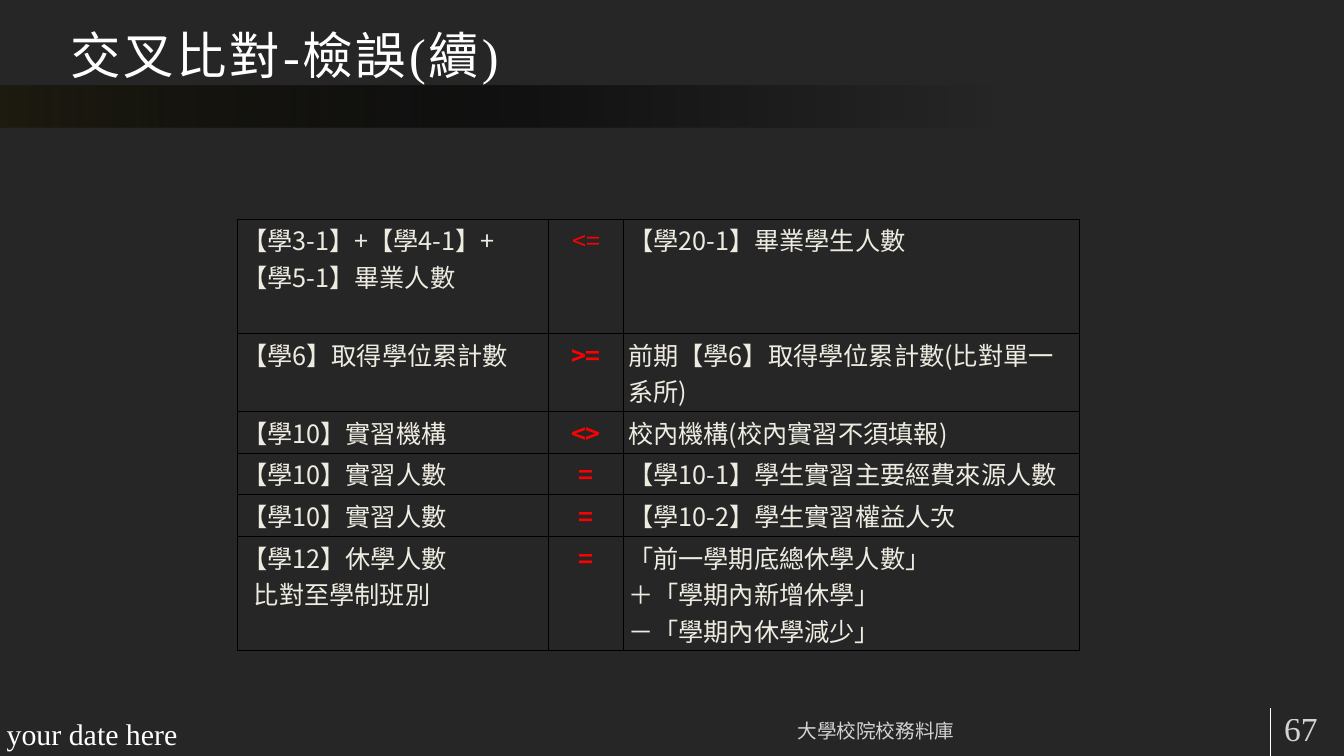
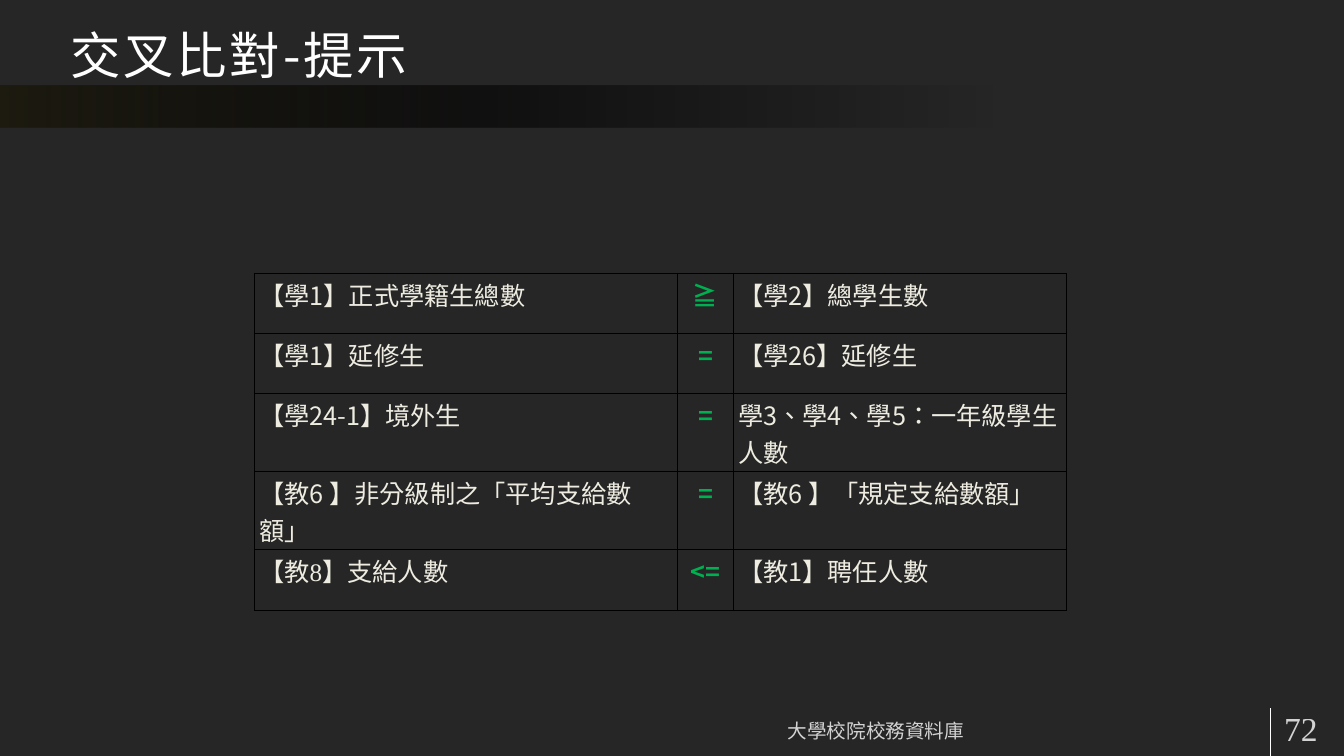
from dataclasses import dataclass

from lxml.etree import SubElement
from pptx import Presentation
from pptx.dml.color import RGBColor
from pptx.enum.shapes import MSO_CONNECTOR, MSO_SHAPE
from pptx.enum.text import MSO_ANCHOR, PP_ALIGN
from pptx.oxml.ns import qn
from pptx.util import Cm, Pt


@dataclass(frozen=True)
class Theme:
    background: str = "262626"
    white: str = "FFFFFF"
    cream: str = "EEECE1"
    red: str = "FF0000"
    green: str = "00B050"
    border: str = "000000"
    # position %, colour, opacity %
    band: tuple = ((0, "1E1C11", 100), (39, "000000", 54), (74, "000000", 0))
    serif: str = "Times New Roman"
    sans: str = "Noto Sans CJK SC"
    language: str = "zh-TW"
    title_size: int = 54
    number_size: int = 36
    date_size: int = 32
    table_size: int = 27
    footer_size: int = 21


theme = Theme()


def format_text(tf, size, color, font, align=PP_ALIGN.LEFT, bold=False, opacity=100, spacing=0):
    """Format every run; opacity is in percent, letter spacing in points."""
    for p in tf.paragraphs:
        p.alignment = align
        for r in p.runs:
            r.font.size = Pt(size)
            r.font.bold = bold
            r.font.name = font
            r.font.color.rgb = RGBColor.from_string(color)
            rPr = r.font._element
            rPr.set("lang", theme.language)
            SubElement(rPr, qn("a:ea"), typeface=theme.sans)
            if opacity < 100:
                SubElement(rPr.find(".//" + qn("a:srgbClr")), qn("a:alpha"), val=str(opacity * 1000))
            if spacing:
                rPr.set("spc", str(spacing * 100))


def add_text(slide, text, box, anchor, insets=(0.46, 0.23)):
    tf = slide.shapes.add_textbox(*map(Cm, box)).text_frame
    tf.word_wrap = True
    tf.vertical_anchor = anchor
    tf.margin_left = tf.margin_right = Cm(insets[0])
    tf.margin_top = tf.margin_bottom = Cm(insets[1])
    tf.text = text
    return tf


slides = [
    {
        "title": "交叉比對-檢誤(續)",
        "title_font": theme.serif,
        "footer": "大學校院校務料庫",
        "number": "67",
        "date": "your date here",
        "operator_color": theme.red,
        "table_at": (8.97, 8.28),
        "columns": (11.77, 2.82, 17.25),
        "heights": (4.33, 2.95, 1.57, 1.57, 1.57, 4.33),
        "rows": [
            ("【學3-1】+【學4-1】+【學5-1】畢業人數", "<=", "【學20-1】畢業學生人數"),
            ("【學6】取得學位累計數", ">=", "前期【學6】取得學位累計數(比對單一系所)"),
            ("【學10】實習機構", "<>", "校內機構(校內實習不須填報)"),
            ("【學10】實習人數", "=", "【學10-1】學生實習主要經費來源人數"),
            ("【學10】實習人數", "=", "【學10-2】學生實習權益人次"),
            ("【學12】休學人數\n比對至學制班別", "=",
             "「前一學期底總休學人數」\n＋「學期內新增休學」\n－「學期內休學減少」"),
        ],
        "plain_operator_rows": {0},
        "serif_rows": set(),
        "indented_rows": {5},
    },
    {
        "title": "交叉比對-提示",
        "title_font": theme.sans,
        "footer": "大學校院校務資料庫",
        "number": "72",
        "date": None,
        "operator_color": theme.green,
        "table_at": (9.62, 10.33),
        "columns": (15.99, 2.11, 12.57),
        "heights": (2.28, 2.28, 2.95, 2.95, 2.28),
        "rows": [
            ("【學1】正式學籍生總數", "≧", "【學2】總學生數"),
            ("【學1】延修生", "=", "【學26】延修生"),
            ("【學24-1】境外生", "=", "學3、學4、學5：一年級學生人數"),
            ("【教6 】非分級制之「平均支給數額」", "=", "【教6 】「規定支給數額」"),
            ("【教8】支給人數", "<=", "【教1】聘任人數"),
        ],
        "plain_operator_rows": set(),
        "serif_rows": {4},
        "indented_rows": set(),
    },
]

prs = Presentation()
prs.slide_width, prs.slide_height = Cm(50.8), Cm(28.58)
fill = prs.slide_master.background.fill
fill.solid()
fill.fore_color.rgb = RGBColor.from_string(theme.background)

for content in slides:
    slide = prs.slides.add_slide(prs.slide_layouts[6])

    # Fading band under the title
    band = slide.shapes.add_shape(MSO_SHAPE.RECTANGLE, 0, Cm(3.23), prs.slide_width, Cm(1.6))
    band.shadow.inherit = False
    band.line.fill.background()
    band.fill.gradient()
    band.fill.gradient_angle = 0
    stops = band._element.spPr.find(".//" + qn("a:gsLst"))
    for stop in list(stops):
        stops.remove(stop)
    for position, color, opacity in theme.band:
        stop = SubElement(stops, qn("a:gs"), pos=str(position * 1000))
        rgb = SubElement(stop, qn("a:srgbClr"), val=color)
        SubElement(rgb, qn("a:alpha"), val=str(opacity * 1000))

    # Rule beside the slide number
    rule = slide.shapes.add_connector(
        MSO_CONNECTOR.STRAIGHT, Cm(48.01), Cm(26.77), Cm(48.01), prs.slide_height)
    rule.line.color.rgb = RGBColor.from_string(theme.white)
    rule.line.width = Pt(0.75)
    SubElement(rule._element.spPr, qn("a:effectLst"))

    tf = add_text(slide, content["title"], (2.2, 0, 45.72, 3.43), MSO_ANCHOR.BOTTOM)
    format_text(tf, theme.title_size, theme.white, content["title_font"], spacing=3)
    tf = add_text(slide, content["footer"], (18.21, 26.77, 29.79, 1.52), MSO_ANCHOR.BOTTOM)
    format_text(tf, theme.footer_size, theme.white, theme.serif, PP_ALIGN.CENTER, opacity=80)
    tf = add_text(slide, content["number"], (48.08, 26.77, 2.92, 1.52), MSO_ANCHOR.MIDDLE)
    format_text(tf, theme.number_size, theme.white, theme.serif, opacity=80)
    if content["date"]:
        tf = add_text(slide, content["date"], (0, 26.92, 11.43, 1.17), MSO_ANCHOR.TOP, (0.25, 0.13))
        format_text(tf, theme.date_size, theme.white, theme.serif)

    # Comparison table: left item, operator, right item
    rows, columns, heights = content["rows"], content["columns"], content["heights"]
    left, top = content["table_at"]
    table = slide.shapes.add_table(
        len(rows), len(columns), Cm(left), Cm(top), Cm(sum(columns)), Cm(sum(heights))).table
    table.first_row = table.horz_banding = False
    for column, width in zip(table.columns, columns):
        column.width = Cm(width)
    for i, (row, height) in enumerate(zip(rows, heights)):
        table.rows[i].height = Cm(height)
        for j, text in enumerate(row):
            cell = table.cell(i, j)
            cell.margin_left = cell.margin_right = Cm(0.18)
            cell.margin_top = cell.margin_bottom = Cm(0.1)
            tcPr = cell._tc.get_or_add_tcPr()
            for side in ("lnL", "lnR", "lnT", "lnB"):
                ln = SubElement(tcPr, qn(f"a:{side}"), w=str(Pt(1)))
                SubElement(SubElement(ln, qn("a:solidFill")), qn("a:srgbClr"), val=theme.border)
            cell.fill.background()

            tf = cell.text_frame
            tf.text = text
            if j == 1:
                format_text(tf, theme.table_size, content["operator_color"], theme.sans,
                            PP_ALIGN.CENTER, bold=i not in content["plain_operator_rows"])
            else:
                font = theme.serif if j == 0 and i in content["serif_rows"] else theme.sans
                format_text(tf, theme.table_size, theme.cream, font)
            if j == 0 and i in content["indented_rows"]:
                pPr = tf.paragraphs[-1]._p.get_or_add_pPr()
                pPr.set("marL", str(Cm(0.45)))

prs.save("out.pptx")
